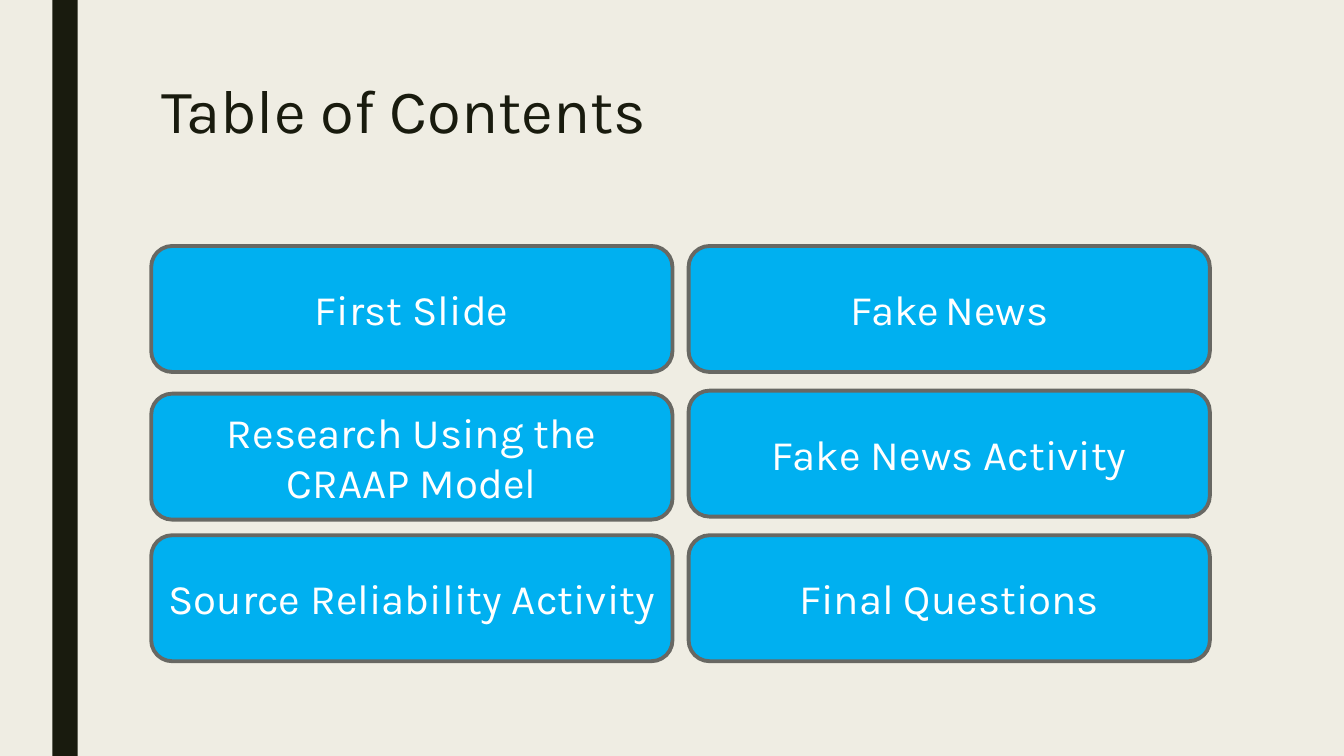
from pptx import Presentation
from pptx.dml.color import RGBColor
from pptx.enum.shapes import MSO_SHAPE
from pptx.enum.text import MSO_ANCHOR, PP_ALIGN
from pptx.util import Inches, Pt

COLORS = {
    "background": "EFEDE3",
    "ink": "191B0E",
    "button": "00B0F0",
    "outline": "686863",
    "label": "FFFFFF",
}
FONT = "Karla"
LEFT, TOP = 1.5, 2.44
COLUMN_STEP, ROW_STEP = 5.33, 1.435
BUTTON_WIDTH, BUTTON_HEIGHT = 5.17, 1.25
LABEL_SIZE = 30

# Each label is a list of (text, size) runs; the last value lowers the button.
BUTTONS = [
    [([("First Slide", LABEL_SIZE)], 0),
     ([("Fake", LABEL_SIZE), (" ", 18), ("News", LABEL_SIZE)], 0)],
    [([("Research Using the CRAAP Model", LABEL_SIZE)], 0.03),
     ([("Fake News Activity", LABEL_SIZE)], 0)],
    [([("Source Reliability Activity", LABEL_SIZE)], 0),
     ([("Final Questions", LABEL_SIZE)], 0)],
]


def color(name):
    return RGBColor.from_string(COLORS[name])


def add_run(paragraph, text, size, color_name):
    run = paragraph.add_run()
    run.text = text
    run.font.name = FONT
    run.font.size = Pt(size)
    run.font.color.rgb = color(color_name)


def add_filled_shape(slide, kind, left, top, width, height, fill):
    shape = slide.shapes.add_shape(
        kind, Inches(left), Inches(top), Inches(width), Inches(height))
    shape.shadow.inherit = False
    shape.fill.solid()
    shape.fill.fore_color.rgb = color(fill)
    shape.line.fill.background()
    return shape


def add_title(slide, text):
    box = slide.shapes.add_textbox(
        Inches(LEFT), Inches(0.75), Inches(10.5), Inches(1.62))
    box.text_frame.word_wrap = True
    paragraph = box.text_frame.paragraphs[0]
    paragraph.line_spacing = 0.89
    add_run(paragraph, text, 44, "ink")


def add_button(slide, column, row, label, drop):
    shape = add_filled_shape(
        slide, MSO_SHAPE.ROUNDED_RECTANGLE,
        LEFT + column * COLUMN_STEP, TOP + row * ROW_STEP + drop,
        BUTTON_WIDTH, BUTTON_HEIGHT, "button")
    shape.line.color.rgb = color("outline")
    shape.line.width = Pt(2.75)
    frame = shape.text_frame
    frame.word_wrap = True
    frame.margin_left = frame.margin_right = Inches(0.05)
    frame.vertical_anchor = MSO_ANCHOR.MIDDLE
    paragraph = frame.paragraphs[0]
    paragraph.alignment = PP_ALIGN.CENTER
    for text, size in label:
        add_run(paragraph, text, size, "label")


def main():
    presentation = Presentation()
    presentation.slide_width = Inches(13.33)
    presentation.slide_height = Inches(7.5)
    slide = presentation.slides.add_slide(presentation.slide_layouts[6])
    slide.background.fill.solid()
    slide.background.fill.fore_color.rgb = color("background")

    add_filled_shape(slide, MSO_SHAPE.RECTANGLE, 0.52, 0, 0.25, 7.5, "ink")
    add_title(slide, "Table of Contents")
    for row, buttons in enumerate(BUTTONS):
        for column, (label, drop) in enumerate(buttons):
            add_button(slide, column, row, label, drop)

    presentation.save("out.pptx")


if __name__ == "__main__":
    main()
